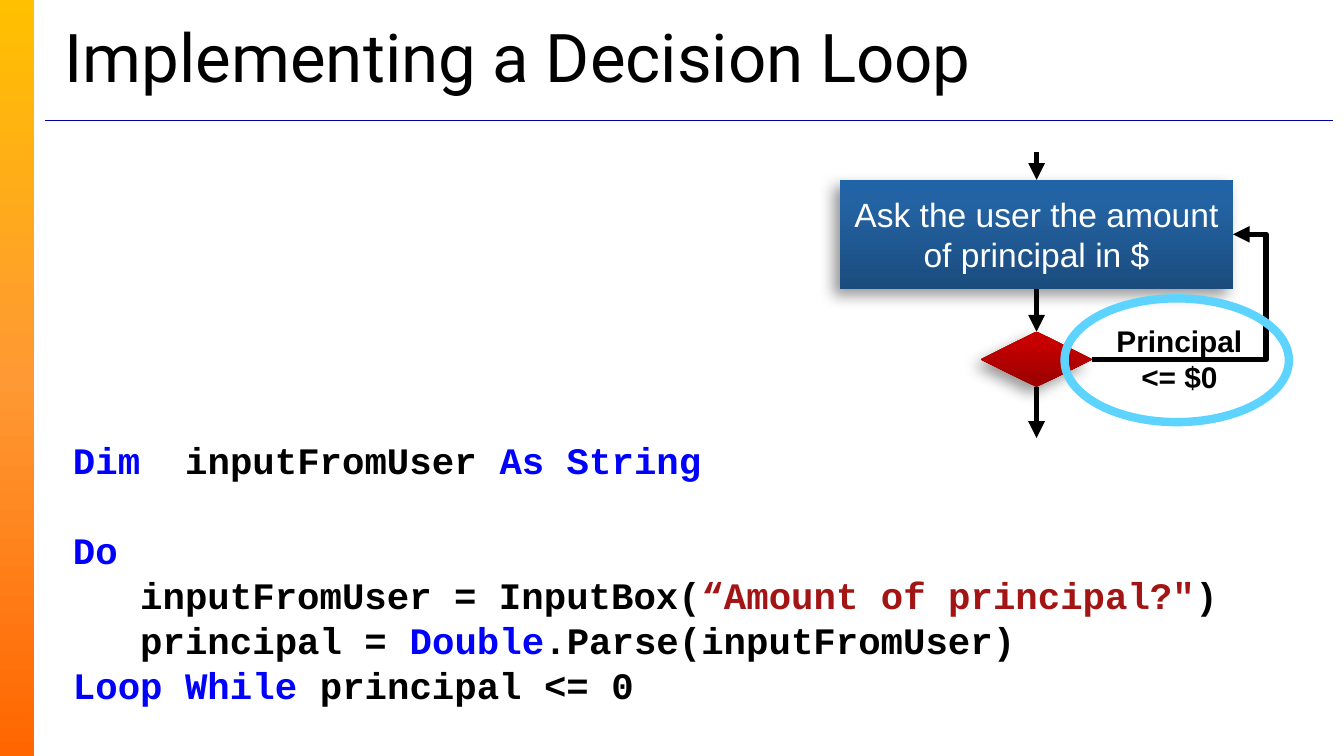
"""Build the slide that shows a decision loop as a flowchart and as code."""
from lxml.etree import SubElement
from pptx import Presentation
from pptx.dml.color import RGBColor
from pptx.enum.shapes import MSO_CONNECTOR as Connector, MSO_SHAPE as Shape
from pptx.enum.text import MSO_ANCHOR as Anchor, PP_ALIGN as Align
from pptx.oxml.ns import qn
from pptx.util import Cm, Pt

BLACK = RGBColor(0x00, 0x00, 0x00)
WHITE = RGBColor(0xFF, 0xFF, 0xFF)
KEYWORD = RGBColor(0x00, 0x00, 0xFF)
STRING = RGBColor(0xA3, 0x15, 0x15)
RULE = RGBColor(0x00, 0x00, 0xA5)
HIGHLIGHT = RGBColor(0x5D, 0xD4, 0xFF)

SIDEBAR_STOPS = [(0, "FFC000"), (50, "FF9933"), (100, "FF6600")]
PROCESS_STOPS = [(0, "1B4C7E"), (80, "2363A3"), (100, "2063A6")]
DECISION_STOPS = [(0, "980000"), (80, "C60000"), (100, "C70000")]

TITLE = "Implementing a Decision Loop"
PROCESS = "Ask the user the amount of principal in $"
CONDITION = "Principal <= $0"
CODE_BLOCKS = [
    [[("Dim ", KEYWORD), (" inputFromUser ", BLACK), ("As String", KEYWORD)]],
    [
        [("Do", KEYWORD)],
        [("   inputFromUser = InputBox(", BLACK),
         ("“Amount of principal?\"", STRING), (")", BLACK)],
        [("   principal = ", BLACK), ("Double", KEYWORD),
         (".Parse(inputFromUser)", BLACK)],
        [("Loop While", KEYWORD), (" principal <= 0", BLACK)],
    ],
]
LINE_PITCH = Pt(24.1)

CENTER = 19.59
ENTRY_TOP, EXIT_BOTTOM = 2.87, 8.28
BOX_TOP, BOX_WIDTH, BOX_HEIGHT = 3.4, 7.42, 2.06
DIAMOND_TOP, DIAMOND_WIDTH, DIAMOND_HEIGHT = 6.27, 2.11, 1.05
LOOP_RIGHT = 23.93


def add_run(paragraph, text, font_name, size, color, bold=False):
    run = paragraph.add_run()
    run.text = text
    run.font.name = font_name
    run.font.size = Pt(size)
    run.font.color.rgb = color
    run.font.bold = bold


def add_shape(slide, kind, *bounds):
    shape = slide.shapes.add_shape(kind, *map(Cm, bounds))
    shape.shadow.inherit = False
    shape.line.fill.background()
    return shape


def fill_gradient(shape, stops, angle):
    shape.fill.gradient()
    shape.fill.gradient_angle = angle
    stop_list = shape._element.spPr.find(qn("a:gradFill")).find(qn("a:gsLst"))
    stop_list.clear()
    for position, color in stops:
        stop = SubElement(stop_list, qn("a:gs"), pos=str(position * 1000))
        SubElement(stop, qn("a:srgbClr"), val=color)


def add_node(slide, kind, stops, top, width, height):
    shape = add_shape(slide, kind, CENTER - width / 2, top, width, height)
    fill_gradient(shape, stops, 90)
    effects = shape._element.spPr.find(qn("a:effectLst"))
    shadow = SubElement(effects, qn("a:outerShdw"), blurRad=str(Pt(8)),
                        dist=str(Pt(5)), dir=str(135 * 60000), rotWithShape="0")
    color = SubElement(shadow, qn("a:srgbClr"), val="000000")
    SubElement(color, qn("a:alpha"), val="40000")
    return shape


def add_line(slide, points, color, width, kind=Connector.STRAIGHT, arrow=True):
    line = slide.shapes.add_connector(kind, *map(Cm, points))
    line.line.color.rgb = color
    line.line.width = Pt(width)
    if arrow:
        SubElement(line.line._get_or_add_ln(), qn("a:tailEnd"), type="triangle")
    SubElement(line._element.spPr, qn("a:effectLst"))
    return line


def add_text_box(slide, *bounds):
    box = slide.shapes.add_textbox(*map(Cm, bounds))
    box.text_frame.word_wrap = True
    return box.text_frame


def set_insets(frame, left, top, right, bottom):
    frame.margin_left, frame.margin_top = left, top
    frame.margin_right, frame.margin_bottom = right, bottom


def add_title(slide):
    title = slide.shapes.title
    title.left, title.top, title.width, title.height = map(
        Cm, (0.97, 0.38, 24.33, 1.35))
    title.text_frame.vertical_anchor = Anchor.MIDDLE
    paragraph = title.text_frame.paragraphs[0]
    paragraph.alignment = Align.LEFT
    add_run(paragraph, TITLE, "Roboto", 36, BLACK)


def add_code(slide):
    frame = add_text_box(slide, 1.38, 8.15, 23.4, 6)
    set_insets(frame, 0, Pt(3), 0, 0)
    paragraph = None
    for block in CODE_BLOCKS:
        for line in block:
            paragraph = frame.add_paragraph() if paragraph else frame.paragraphs[0]
            paragraph.line_spacing = LINE_PITCH
            for text, color in line:
                add_run(paragraph, text, "Courier New", 20, color, True)
        if block is not CODE_BLOCKS[-1]:
            paragraph.space_after = LINE_PITCH


def add_flowchart(slide):
    process = add_node(slide, Shape.FLOWCHART_PROCESS, PROCESS_STOPS,
                       BOX_TOP, BOX_WIDTH, BOX_HEIGHT)
    frame = process.text_frame
    frame.word_wrap = True
    frame.vertical_anchor = Anchor.MIDDLE
    set_insets(frame, *[Cm(0.13)] * 4)
    frame.paragraphs[0].alignment = Align.CENTER
    add_run(frame.paragraphs[0], PROCESS, "Arial", 18, WHITE)
    add_node(slide, Shape.FLOWCHART_DECISION, DECISION_STOPS,
             DIAMOND_TOP, DIAMOND_WIDTH, DIAMOND_HEIGHT)

    start = CENTER + DIAMOND_WIDTH / 2
    end = CENTER + BOX_WIDTH / 2
    loop = add_line(slide, (start, DIAMOND_TOP + DIAMOND_HEIGHT / 2,
                            end, BOX_TOP + BOX_HEIGHT / 2),
                    BLACK, 3, Connector.ELBOW)
    bend = round((LOOP_RIGHT - start) / (end - start) * 100000)
    geometry = loop._element.spPr.find(qn("a:prstGeom"))
    guides = geometry.find(qn("a:avLst"))
    SubElement(guides, qn("a:gd"), name="adj1", fmla=f"val {bend}")

    for top, bottom in [(ENTRY_TOP, BOX_TOP),
                        (BOX_TOP + BOX_HEIGHT, DIAMOND_TOP),
                        (DIAMOND_TOP + DIAMOND_HEIGHT, EXIT_BOTTOM)]:
        add_line(slide, (CENTER, top, CENTER, bottom), BLACK, 3)

    label = add_text_box(slide, 20.45, 5.97, 3.68, 1.63).paragraphs[0]
    label.alignment = Align.CENTER
    add_run(label, CONDITION, "Arial", 16, BLACK, True)

    ellipse = add_shape(slide, Shape.OVAL, 20.12, 5.64, 4.24, 2.34)
    ellipse.fill.background()
    ellipse.line.color.rgb = HIGHLIGHT
    ellipse.line.width = Pt(4.5)


def main():
    presentation = Presentation()
    presentation.slide_width, presentation.slide_height = Cm(25.4), Cm(14.29)
    slide = presentation.slides.add_slide(presentation.slide_layouts[5])
    sidebar = add_shape(slide, Shape.RECTANGLE, 0, 0, 0.64, 14.29)
    fill_gradient(sidebar, SIDEBAR_STOPS, 270)
    add_line(slide, (0.85, 2.28, 25.2, 2.28), RULE, 0.75, arrow=False)
    add_title(slide)
    add_code(slide)
    add_flowchart(slide)
    presentation.save("out.pptx")


if __name__ == "__main__":
    main()
